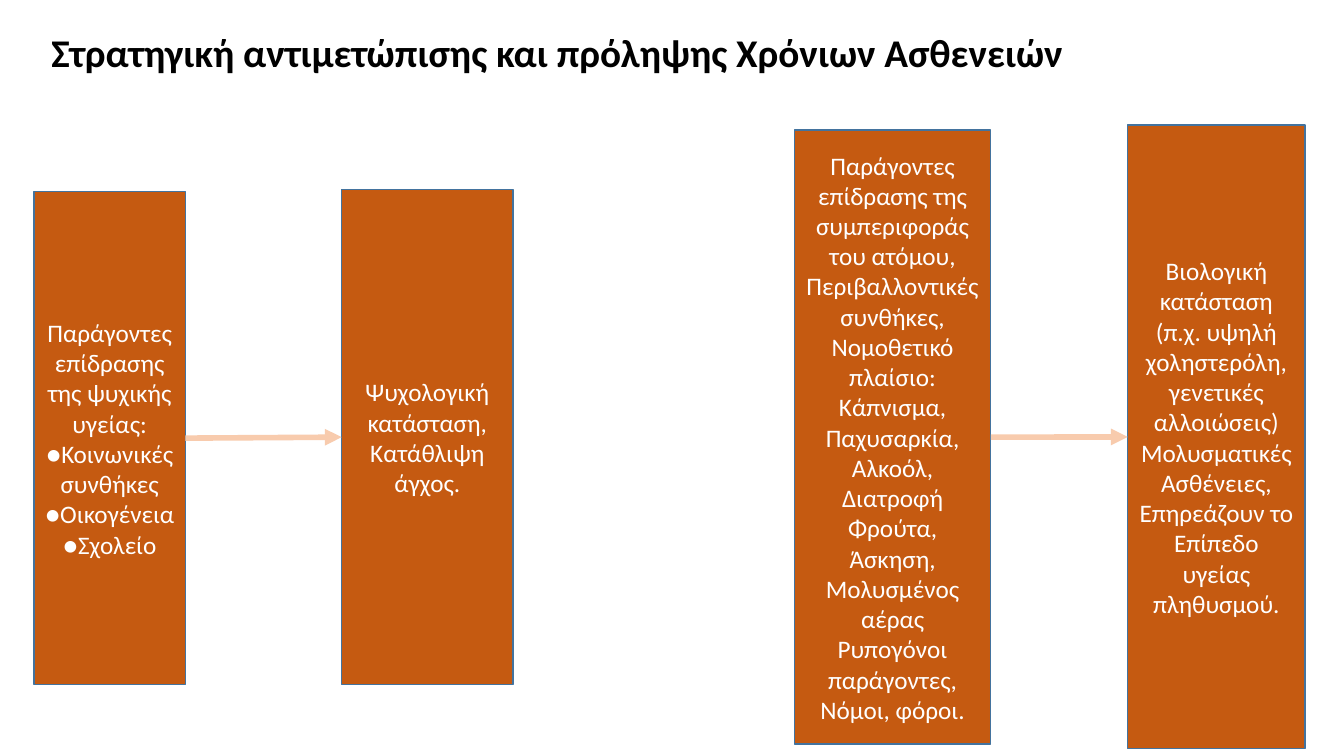
from lxml import etree
from pptx import Presentation
from pptx.dml.color import RGBColor
from pptx.enum import shapes, text
from pptx.oxml.ns import qn
from pptx.util import Cm, Pt

FONT = "Calibri"
COLOURS = {"fill": "C55A11", "border": "43739E", "arrow": "F8CBAD",
           "light": "FFFFFF", "title": "000000"}

TITLE = "Στρατηγική αντιμετώπισης και πρόληψης Χρόνιων Ασθενειών"
TITLE_PLACE = (1.04, 0.58, 27.81, 1.45)

# Each chain links a cause to its effect: (left, top, width, height in cm), paragraphs
CHAINS = [
    [
        ((0.86, 4.83, 3.81, 12.42), [
            "Παράγοντες επίδρασης της ψυχικής υγείας:",
            "●Κοινωνικές συνθήκες",
            "●Οικογένεια",
            "●Σχολείο",
        ]),
        ((8.61, 4.78, 4.32, 12.47), [
            "Ψυχολογική κατάσταση, Κατάθλιψη άγχος.",
        ]),
    ],
    [
        ((20.02, 3.28, 4.95, 15.47), [
            "Παράγοντες επίδρασης της",
            "συμπεριφοράς του ατόμου, Περιβαλλοντικές συνθήκες, "
            "Νομοθετικό πλαίσιο: Κάπνισμα, Παχυσαρκία, Αλκοόλ, "
            "Διατροφή Φρούτα, Άσκηση, Μολυσμένος αέρας "
            "Ρυπογόνοι παράγοντες, Νόμοι, φόροι.",
        ]),
        ((28.42, 3.15, 4.47, 15.72), [
            "Βιολογική κατάσταση (π.χ. υψηλή χοληστερόλη, "
            "γενετικές αλλοιώσεις) Μολυσματικές",
            "Ασθένειες, Επηρεάζουν το Επίπεδο υγείας πληθυσμού.",
        ]),
    ],
]
LEFT_SITE, RIGHT_SITE = 1, 3


def colour(name):
    return RGBColor.from_string(COLOURS[name])


def add_span(para, wording, size, colour_name, bold=False):
    span = para.add_run()
    span.text = wording
    span.font.name = FONT
    span.font.size = Pt(size)
    span.font.bold = bold
    span.font.color.rgb = colour(colour_name)


def fill_title(page):
    title = page.shapes.title
    title.left, title.top, title.width, title.height = map(Cm, TITLE_PLACE)
    frame = title.text_frame
    frame.word_wrap = True
    frame.auto_size = text.MSO_AUTO_SIZE.NONE
    frame.vertical_anchor = text.MSO_ANCHOR.TOP
    para = frame.paragraphs[0]
    para.alignment = text.PP_ALIGN.LEFT
    para.line_spacing = 1.0
    add_span(para, TITLE, 28, "title", bold=True)


def add_box(page, place, wordings):
    box = page.shapes.add_shape(shapes.MSO_SHAPE.RECTANGLE, *map(Cm, place))
    box.shadow.inherit = False
    box.fill.solid()
    box.fill.fore_color.rgb = colour("fill")
    box.line.color.rgb = colour("border")
    box.line.width = Pt(1)
    frame = box.text_frame
    frame.word_wrap = True
    frame.vertical_anchor = text.MSO_ANCHOR.MIDDLE
    for index, wording in enumerate(wordings):
        para = frame.add_paragraph() if index else frame.paragraphs[0]
        para.alignment = text.PP_ALIGN.CENTER
        add_span(para, wording, 18, "light")
    return box


def add_arrow(page, cause, effect):
    arrow = page.shapes.add_connector(shapes.MSO_CONNECTOR.STRAIGHT, 0, 0, 0, 0)
    arrow.begin_connect(cause, RIGHT_SITE)
    arrow.end_connect(effect, LEFT_SITE)
    arrow.line.color.rgb = colour("arrow")
    arrow.line.width = Pt(4)
    etree.SubElement(arrow.line._get_or_add_ln(), qn("a:tailEnd"), type="triangle")
    etree.SubElement(arrow._element.spPr, qn("a:effectLst"))


def main():
    deck = Presentation()
    deck.slide_width, deck.slide_height = Cm(33.87), Cm(19.05)
    page = deck.slides.add_slide(deck.slide_layouts.get_by_name("Title Only"))
    fill_title(page)
    for chain in CHAINS:
        cause, effect = [add_box(page, place, wordings) for place, wordings in chain]
        add_arrow(page, cause, effect)
    deck.save("out.pptx")


if __name__ == "__main__":
    main()
